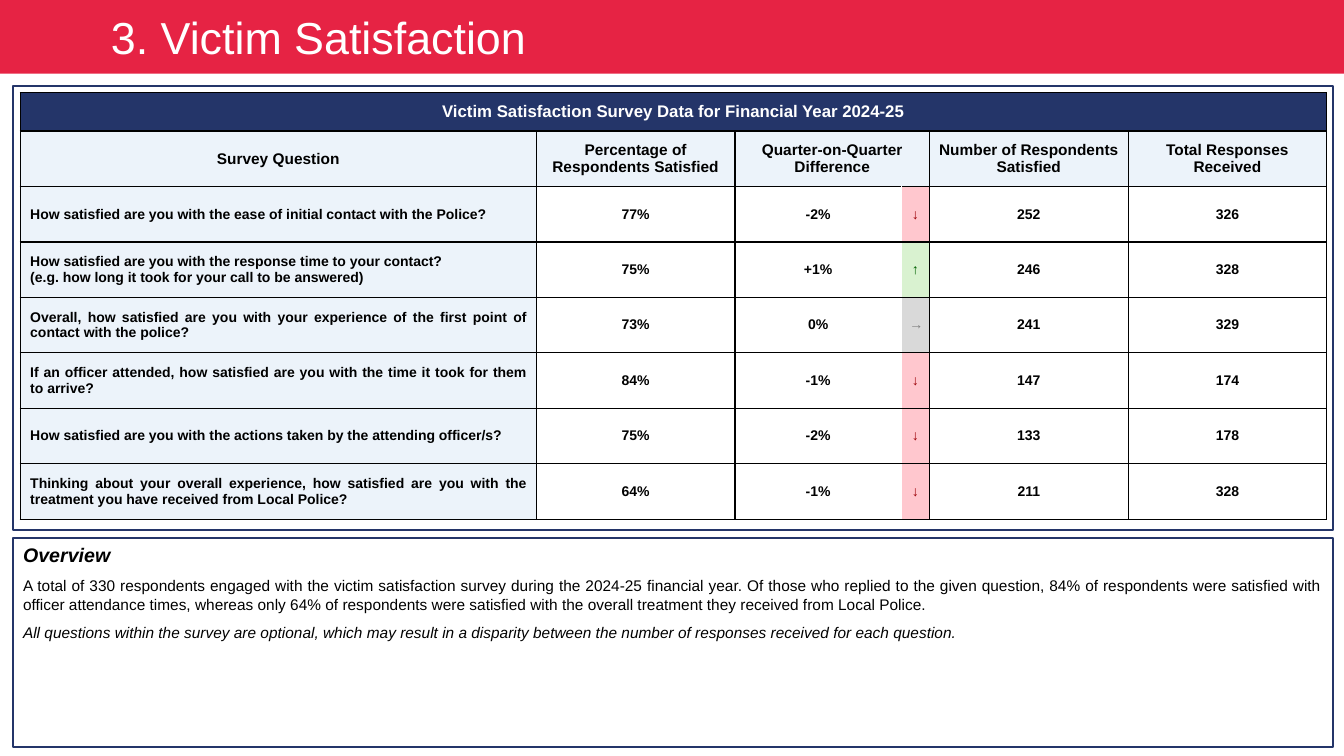
from lxml import etree
from pptx import Presentation, util as u
from pptx.dml.color import RGBColor
from pptx.enum import shapes, text
from pptx.oxml import ns

FONT = "Arial"
COLORS = {
    "banner": "E62344", "navy": "243569", "pale": "ECF3FA", "white": "FFFFFF", "black": "000000",
    "fall": "9C0006", "fall_fill": "FFC7CE", "rise": "006100", "rise_fill": "D9F2D0",
    "steady": "808080", "steady_fill": "D9D9D9",
}
TRENDS = {"↓": "fall", "↑": "rise", "→": "steady"}
COLUMN_WIDTHS = [5.12, 1.97, 1.65, 0.28, 1.97, 1.97]
TITLE_HEIGHT, ROW_HEIGHT = 0.38, 0.55
ARROW_COLUMN = 3
CENTER, JUSTIFY, LEFT = text.PP_ALIGN.CENTER, text.PP_ALIGN.JUSTIFY, text.PP_ALIGN.LEFT

SURVEY_TITLE = "Victim Satisfaction Survey Data for Financial Year 2024-25"
HEADINGS = ["Survey Question", "Percentage of Respondents Satisfied", "Quarter-on-Quarter Difference",
            "", "Number of Respondents Satisfied", "Total Responses Received"]
RESULTS = [
    ["How satisfied are you with the ease of initial contact with the Police?",
     "77%", "-2%", "↓", "252", "326"],
    ["How satisfied are you with the response time to your contact?\n"
     "(e.g. how long it took for your call to be answered)",
     "75%", "+1%", "↑", "246", "328"],
    ["Overall, how satisfied are you with your experience of the first point of contact with the police?",
     "73%", "0%", "→", "241", "329"],
    ["If an officer attended, how satisfied are you with the time it took for them to arrive?",
     "84%", "-1%", "↓", "147", "174"],
    ["How satisfied are you with the actions taken by the attending officer/s?",
     "75%", "-2%", "↓", "133", "178"],
    ["Thinking about your overall experience, how satisfied are you with the treatment you have "
     "received from Local Police?",
     "64%", "-1%", "↓", "211", "328"],
]
OVERVIEW = [
    "Overview",
    "A total of 330 respondents engaged with the victim satisfaction survey during the 2024-25 financial "
    "year. Of those who replied to the given question, 84% of respondents were satisfied with officer "
    "attendance times, whereas only 64% of respondents were satisfied with the overall treatment they "
    "received from Local Police.",
    "All questions within the survey are optional, which may result in a disparity between the number of "
    "responses received for each question.",
]


def rgb(name):
    """Return the named colour."""
    return RGBColor.from_string(COLORS[name])


def format_paragraph(paragraph, size, color="black", bold=False, italic=False, align=LEFT):
    """Apply alignment and font settings to every run of a paragraph."""
    paragraph.alignment = align
    for run in paragraph.runs:
        font = run.font
        font.name, font.size, font.bold, font.italic = FONT, u.Pt(size), bold, italic
        font.color.rgb = rgb(color)


def add_title(slide, wording):
    """Turn the title placeholder into a full-width banner."""
    banner = slide.shapes.title
    banner.left, banner.top = u.Inches(0), u.Inches(0)
    banner.width, banner.height = u.Inches(13.33), u.Inches(0.73)
    banner.fill.solid()
    banner.fill.fore_color.rgb = rgb("banner")
    frame = banner.text_frame
    frame.text = wording
    frame.auto_size = text.MSO_AUTO_SIZE.NONE
    frame.vertical_anchor = text.MSO_ANCHOR.MIDDLE
    frame.margin_left = u.Inches(1.1)
    format_paragraph(frame.paragraphs[0], 32, "white")


def add_panel(slide, top, height):
    """Add an unfilled navy-outlined panel and return it."""
    panel = slide.shapes.add_shape(shapes.MSO_SHAPE.RECTANGLE, u.Inches(0.13), u.Inches(top),
                                   u.Inches(13.09), u.Inches(height))
    panel.shadow.inherit = False
    panel.fill.background()
    panel.line.color.rgb = rgb("navy")
    panel.line.width = u.Pt(1.25)
    return panel


def write_overview(panel):
    """Write the overview heading and its two paragraphs."""
    frame = panel.text_frame
    frame.word_wrap = True
    frame.vertical_anchor = text.MSO_ANCHOR.TOP
    frame.text = "\n".join(OVERVIEW)
    heading, summary, caveat = frame.paragraphs
    format_paragraph(heading, 14, bold=True, italic=True)
    format_paragraph(summary, 11, align=JUSTIFY)
    format_paragraph(caveat, 11, italic=True, align=JUSTIFY)
    for paragraph in (summary, caveat):
        paragraph.space_before = u.Pt(7)


def set_borders(cell, left="black", right="black"):
    """Draw one-point borders round a cell."""
    properties = cell._tc.get_or_add_tcPr()
    sides = {"a:lnL": left, "a:lnR": right, "a:lnT": "black", "a:lnB": "black"}
    for position, (tag, color) in enumerate(sides.items()):
        line = etree.Element(ns.qn(tag), w=str(u.Pt(1)))
        fill = etree.SubElement(line, ns.qn("a:solidFill"))
        etree.SubElement(fill, ns.qn("a:srgbClr"), val=COLORS[color])
        properties.insert(position, line)


def fill_cell(cell, wording, size, color="black", fill=None, align=CENTER, side_margin=0.1):
    """Write and format one table cell."""
    cell.text = wording
    cell.vertical_anchor = text.MSO_ANCHOR.MIDDLE
    cell.margin_left = cell.margin_right = u.Inches(side_margin)
    cell.margin_top = cell.margin_bottom = u.Inches(0.08)
    for paragraph in cell.text_frame.paragraphs:
        format_paragraph(paragraph, size, color, bold=True, align=align)
    if fill:
        cell.fill.solid()
        cell.fill.fore_color.rgb = rgb(fill)
    else:
        cell.fill.background()


def add_survey_table(slide):
    """Add the survey table with its title, headings and results."""
    row_count = len(RESULTS) + 2
    height = TITLE_HEIGHT + ROW_HEIGHT * (row_count - 1)
    survey = slide.shapes.add_table(row_count, len(COLUMN_WIDTHS), u.Inches(0.2), u.Inches(0.92),
                                    u.Inches(sum(COLUMN_WIDTHS)), u.Inches(height)).table
    survey.first_row = survey.horz_banding = False
    for column, width in zip(survey.columns, COLUMN_WIDTHS):
        column.width = u.Inches(width)
    for index, row in enumerate(survey.rows):
        row.height = u.Inches(ROW_HEIGHT if index else TITLE_HEIGHT)

    survey.cell(0, 0).merge(survey.cell(0, len(COLUMN_WIDTHS) - 1))
    survey.cell(1, ARROW_COLUMN - 1).merge(survey.cell(1, ARROW_COLUMN))
    fill_cell(survey.cell(0, 0), SURVEY_TITLE, 12, "white", "navy")
    for index, heading in enumerate(HEADINGS):
        fill_cell(survey.cell(1, index), heading, 11, fill="pale", side_margin=0.04 if index else 0.1)
    for row, result in enumerate(RESULTS, 2):
        for index, wording in enumerate(result):
            cell = survey.cell(row, index)
            if index == 0:
                fill_cell(cell, wording, 10, fill="pale", align=JUSTIFY)
            elif index == ARROW_COLUMN:
                trend = TRENDS[wording]
                fill_cell(cell, wording, 10, trend, f"{trend}_fill", side_margin=0.08)
            else:
                fill_cell(cell, wording, 10)

    for row in range(row_count):
        for index in range(len(COLUMN_WIDTHS)):
            is_result = row > 1
            set_borders(survey.cell(row, index),
                        left="white" if is_result and index == ARROW_COLUMN else "black",
                        right="white" if is_result and index == ARROW_COLUMN - 1 else "black")


def main():
    """Build the victim satisfaction slide."""
    deck = Presentation()
    deck.slide_width, deck.slide_height = u.Inches(13.33), u.Inches(7.5)
    slide = deck.slides.add_slide(deck.slide_layouts[5])
    add_title(slide, "3. Victim Satisfaction")
    add_panel(slide, 0.85, 4.41)
    write_overview(add_panel(slide, 5.34, 2.07))
    add_survey_table(slide)
    deck.save("out.pptx")


if __name__ == "__main__":
    main()
